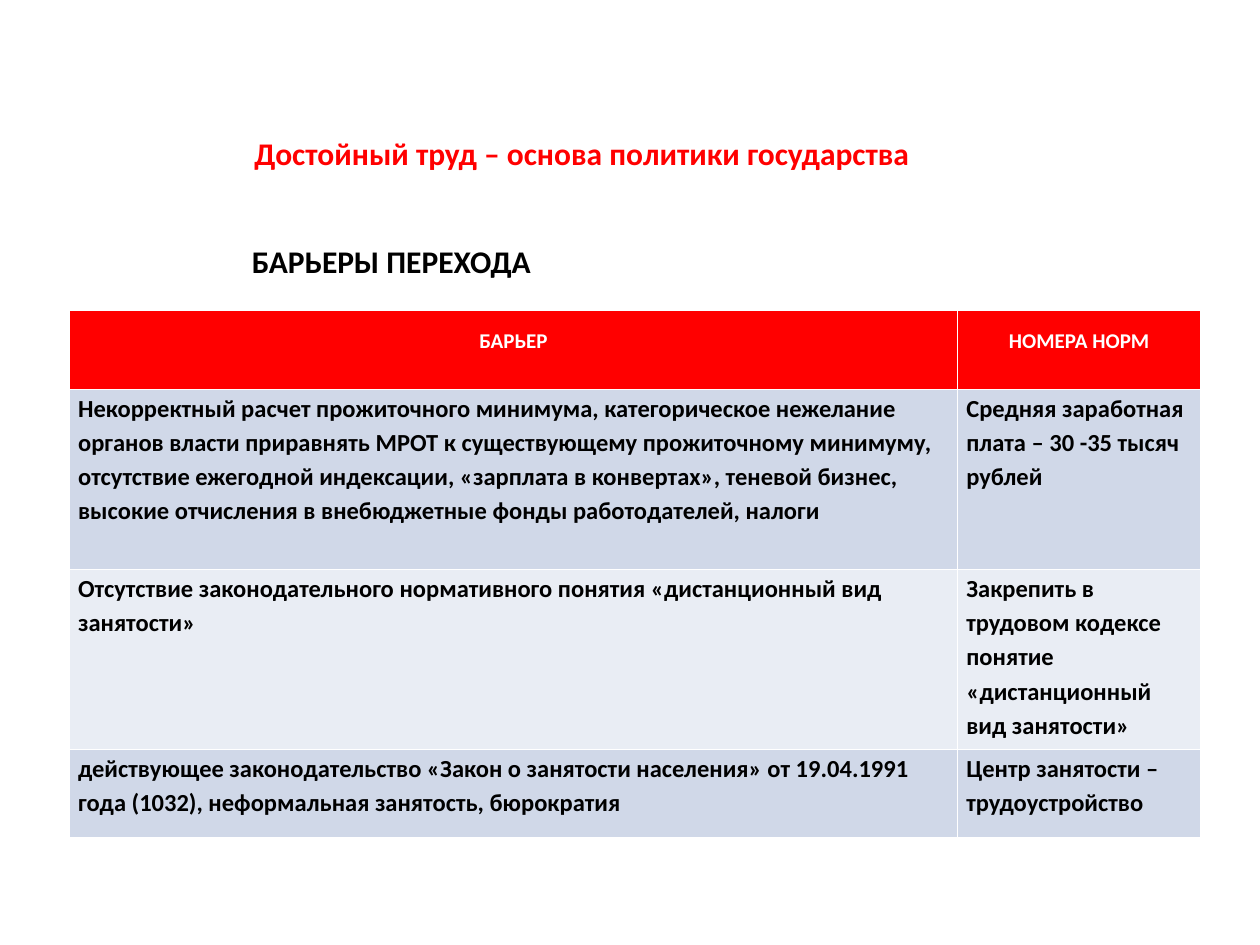
from pptx import Presentation
from pptx.dml.color import RGBColor
from pptx.enum import text
from pptx.util import Inches, Pt

RED = RGBColor(0xFF, 0x00, 0x00)
BLACK = RGBColor(0x00, 0x00, 0x00)
WHITE = RGBColor(0xFF, 0xFF, 0xFF)
DARK_BAND = RGBColor(0xD0, 0xD8, 0xE8)
LIGHT_BAND = RGBColor(0xE9, 0xED, 0xF4)

COLUMN_WIDTHS = (7.05, 1.93)
ROW_HEIGHTS = (0.63, 1.43, 1.43, 0.7)
BARRIERS = (
    ("БАРЬЕР", "НОМЕРА НОРМ"),
    ("Некорректный расчет прожиточного минимума, категорическое нежелание "
     "органов власти приравнять МРОТ к существующему прожиточному минимуму, "
     "отсутствие ежегодной индексации, «зарплата в конвертах», теневой бизнес, "
     "высокие отчисления в внебюджетные фонды работодателей, налоги",
     "Средняя заработная плата – 30 -35 тысяч рублей"),
    ("Отсутствие законодательного нормативного понятия «дистанционный вид занятости»",
     "Закрепить в трудовом кодексе понятие «дистанционный вид занятости»"),
    ("действующее законодательство «Закон о занятости населения» от 19.04.1991 "
     "года (1032), неформальная занятость, бюрократия",
     "Центр занятости – трудоустройство"),
)


def write(paragraph, wording, size, color):
    paragraph.text = wording
    font = paragraph.font
    font.name = "Calibri"
    font.size = Pt(size)
    font.bold = True
    font.color.rgb = color


def add_heading(slide, wording, left, top, width, height, color, wrap):
    frame = slide.shapes.add_textbox(
        Inches(left), Inches(top), Inches(width), Inches(height)).text_frame
    frame.word_wrap = wrap
    if wrap:
        frame.vertical_anchor = text.MSO_ANCHOR.MIDDLE
    else:
        frame.auto_size = text.MSO_AUTO_SIZE.SHAPE_TO_FIT_TEXT
    write(frame.paragraphs[0], wording, 18, color)


def fill_cell(cell, color):
    cell.fill.solid()
    cell.fill.fore_color.rgb = color


def write_header_cell(cell, wording):
    fill_cell(cell, RED)
    label = cell.text_frame.paragraphs[0]
    label.alignment = text.PP_ALIGN.CENTER
    label.line_spacing = 1.5
    write(label, wording, 12, WHITE)


def write_body_cell(cell, wording, band):
    fill_cell(cell, band)
    cell.margin_left = cell.margin_right = Inches(0.07)
    cell.margin_top = cell.margin_bottom = 0
    entry = cell.text_frame.paragraphs[0]
    entry.line_spacing = 1.15
    write(entry, wording, 14, BLACK)


def add_barrier_table(slide, left, top):
    table = slide.shapes.add_table(
        len(ROW_HEIGHTS), len(COLUMN_WIDTHS), Inches(left), Inches(top),
        Inches(sum(COLUMN_WIDTHS)), Inches(sum(ROW_HEIGHTS))).table
    for column, width in zip(table.columns, COLUMN_WIDTHS):
        column.width = Inches(width)
    for index, (row, height) in enumerate(zip(table.rows, ROW_HEIGHTS)):
        row.height = Inches(height)
        for cell, wording in zip(row.cells, BARRIERS[index]):
            if index == 0:
                write_header_cell(cell, wording)
            else:
                write_body_cell(cell, wording, DARK_BAND if index % 2 else LIGHT_BAND)


def main():
    presentation = Presentation()
    presentation.slide_width = Inches(10)
    presentation.slide_height = Inches(7.5)
    slide = presentation.slides.add_slide(presentation.slide_layouts[6])
    add_heading(slide, "БАРЬЕРЫ ПЕРЕХОДА", 1.9, 1.87, 2.44, 0.4, BLACK, False)
    add_heading(slide, "Достойный труд – основа политики государства",
                1.92, 1.02, 7.15, 0.39, RED, True)
    add_barrier_table(slide, 0.55, 2.46)
    presentation.save("out.pptx")


if __name__ == "__main__":
    main()
